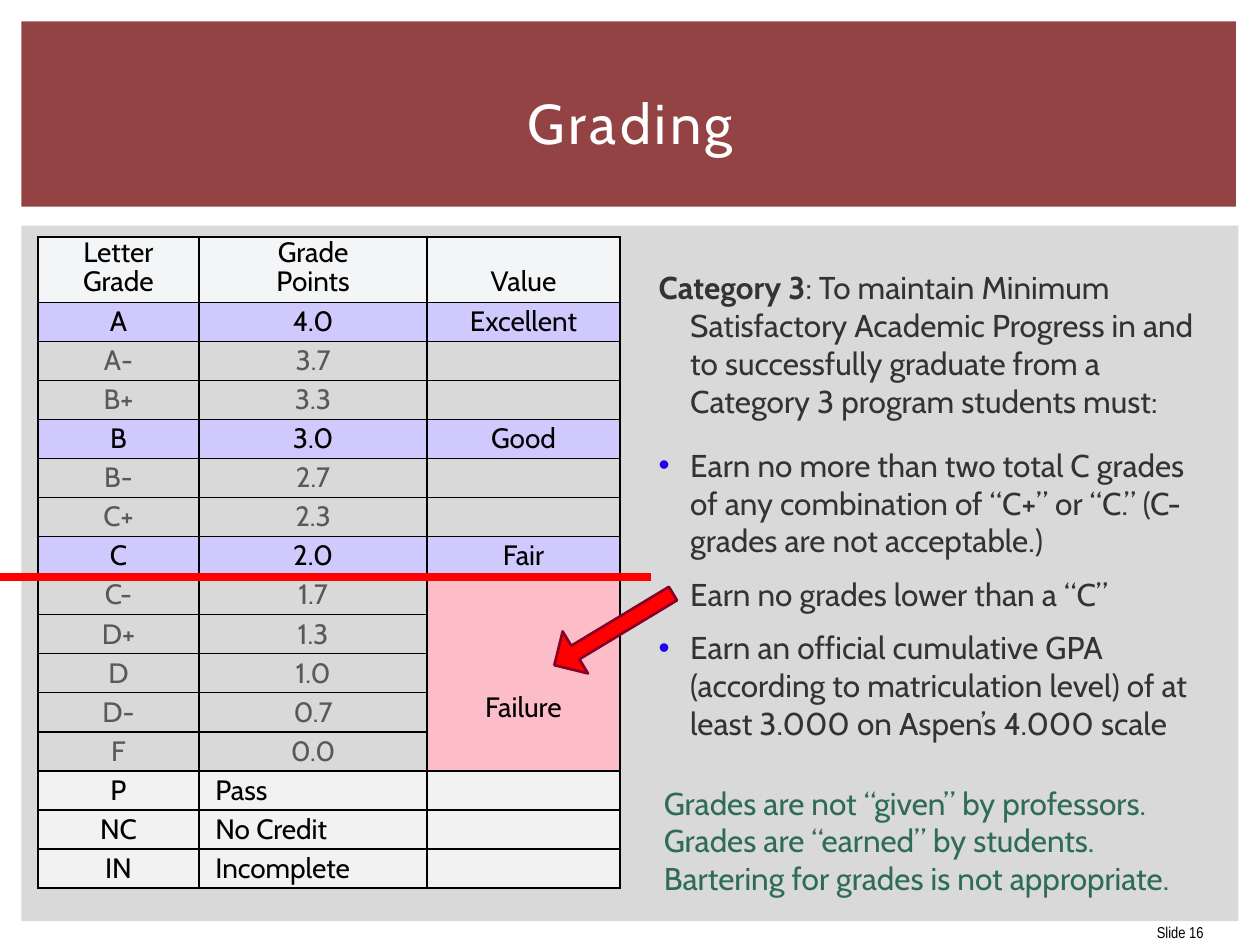
from lxml.etree import SubElement
from pptx import Presentation
from pptx.dml.color import RGBColor
from pptx.enum.shapes import MSO_CONNECTOR, MSO_SHAPE
from pptx.enum.text import MSO_ANCHOR, PP_ALIGN
from pptx.oxml.ns import qn
from pptx.util import Inches, Pt

BLACK = RGBColor(0x00, 0x00, 0x00)
WHITE = RGBColor(0xFF, 0xFF, 0xFF)
PANEL_GREY = RGBColor(0xD9, 0xD9, 0xD9)
MAROON = RGBColor(0x93, 0x43, 0x43)
HEADER_GREY = RGBColor(0xF4, 0xF5, 0xF7)
LILAC = RGBColor(0xD0, 0xC9, 0xFE)
PINK = RGBColor(0xFC, 0xBD, 0xC8)
PALE_GREY = RGBColor(0xF2, 0xF2, 0xF2)
MID_GREY = RGBColor(0x59, 0x59, 0x59)
DARK_GREY = RGBColor(0x33, 0x33, 0x33)
GREEN = RGBColor(0x2E, 0x6C, 0x57)
RED = RGBColor(0xFF, 0x00, 0x00)
WINE = RGBColor(0x86, 0x01, 0x27)
BULLET_BLUE = RGBColor(0x1F, 0x03, 0xEB)

COLUMNS, ROWS = 100, 75
WIDTH, HEIGHT = Inches(10), Inches(7.5)

HEADERS = ["Letter Grade", "Grade\nPoints", "Value"]
GRADES = [
    ("A", "4.0", "Excellent"), ("A-", "3.7", ""), ("B+", "3.3", ""),
    ("B", "3.0", "Good"), ("B-", "2.7", ""), ("C+", "2.3", ""),
    ("C", "2.0", "Fair"), ("C-", "1.7", "Failure"), ("D+", "1.3", ""),
    ("D", "1.0", ""), ("D-", "0.7", ""), ("F", "0.0", ""),
]
OTHER_MARKS = [("P", "Pass", ""), ("NC", "No Credit", ""), ("IN", "Incomplete", "")]
FAILURE_ROWS = (8, 12)

REQUIREMENTS = [
    "Earn no more than two total C grades of any combination of “C+” or “C.” "
    "(C- grades are not acceptable.)",
    "Earn no grades lower than a “C”",
    "Earn an official cumulative GPA (according to matriculation level) of at "
    "least 3.000 on Aspen’s 4.000 scale",
]
REMINDERS = [
    "Grades are not “given” by professors.",
    "Grades are “earned” by students.",
    "Bartering for grades is not appropriate.",
]


def write(paragraph, text, size=18, color=BLACK, font="Cabin", bold=False,
          align=PP_ALIGN.LEFT, tracking=0):
    """Add text to a paragraph, with a line break at each newline."""
    paragraph.alignment = align
    for number, line in enumerate(text.split("\n")):
        if number:
            paragraph.add_line_break()
        run = paragraph.add_run()
        run.text = line
        run.font.size, run.font.name, run.font.bold = Pt(size), font, bold
        run.font.color.rgb = color
        if tracking:
            run.font._element.set("spc", str(tracking * 100))


def hang(paragraph, after, bullet=None):
    """Set a hanging indent and spacing, with an optional bullet."""
    paragraph.space_before, paragraph.space_after = Pt(7.5), Pt(after)
    properties = paragraph._p.get_or_add_pPr()
    properties.set("marL", str(Inches(0.3)))
    properties.set("indent", str(Inches(-0.25)))
    if bullet:
        color = SubElement(properties, qn("a:buClr"))
        SubElement(color, qn("a:srgbClr"), val=str(BULLET_BLUE))
        SubElement(properties, qn("a:buFont"), typeface="Arial")
        SubElement(properties, qn("a:buChar"), char=bullet)


def outline_cell(cell):
    properties = cell._tc.get_or_add_tcPr()
    for side in ("lnL", "lnR", "lnT", "lnB"):
        line = SubElement(properties, qn(f"a:{side}"), w=str(Pt(1)))
        fill = SubElement(line, qn("a:solidFill"))
        SubElement(fill, qn("a:srgbClr"), val=str(BLACK))


class GridSlide:
    """A slide whose lengths are counted in grid columns and rows."""

    def __init__(self, presentation):
        self.slide = presentation.slides.add_slide(presentation.slide_layouts[6])
        self.shapes = self.slide.shapes

    def box(self, left, top, width, height):
        column, row = WIDTH / COLUMNS, HEIGHT / ROWS
        return (round(left * column), round(top * row),
                round(width * column), round(height * row))

    def block(self, area, fill, kind=MSO_SHAPE.RECTANGLE):
        shape = self.shapes.add_shape(kind, *self.box(*area))
        shape.shadow.inherit = False
        shape.fill.solid()
        shape.fill.fore_color.rgb = fill
        shape.line.fill.background()
        return shape

    def arrow(self, area, rotation):
        shape = self.block(area, RED, MSO_SHAPE.RIGHT_ARROW)
        shape.adjustments[0] = 0.32
        shape.rotation = rotation
        shape.line.color.rgb = WINE
        shape.line.width = Pt(1.5)

    def rule(self, left, top, width):
        x, y, length, _ = self.box(left, top, width, 0)
        line = self.shapes.add_connector(MSO_CONNECTOR.STRAIGHT, x, y, x + length, y)
        line.line.color.rgb = RED
        line.line.width = Pt(4.5)
        SubElement(line._element.spPr, qn("a:effectLst"))

    def text(self, area, lines=(), anchor=MSO_ANCHOR.TOP, **style):
        frame = self.shapes.add_textbox(*self.box(*area)).text_frame
        frame.word_wrap = True
        frame.vertical_anchor = anchor
        for number, line in enumerate(lines):
            paragraph = frame.add_paragraph() if number else frame.paragraphs[0]
            write(paragraph, line, **style)
        return frame

    def table(self, area, widths, heights):
        frame = self.shapes.add_table(len(heights), len(widths), *self.box(*area))
        table = frame.table
        table.first_row = table.horz_banding = False
        for column, width in zip(table.columns, widths):
            column.width = self.box(0, 0, width, 0)[2]
        for row, height in zip(table.rows, heights):
            row.height = self.box(0, 0, 0, height)[3]
        return table

    def cell(self, cell, text, fill=None, margins=(0.03, 0.02), **style):
        outline_cell(cell)
        cell.margin_left = cell.margin_right = Inches(margins[0])
        cell.margin_top = cell.margin_bottom = Inches(margins[1])
        if fill is None:
            cell.fill.background()
        else:
            cell.fill.solid()
            cell.fill.fore_color.rgb = fill
        paragraph = cell.text_frame.paragraphs[0]
        if text:
            write(paragraph, text, size=16, **style)
        else:
            SubElement(paragraph._p, qn("a:endParaRPr"), sz="1600")
        return paragraph


def add_grade_table(grid):
    records = GRADES + OTHER_MARKS
    table = grid.table((3, 18.8, 46.2, 51.7), (12.8, 18.1, 15.3),
                       [5.2] + [3.1] * len(records))
    for column, header in enumerate(HEADERS):
        cell = table.cell(0, column)
        paragraph = grid.cell(cell, header, HEADER_GREY, margins=(0.06, 0.03),
                              align=PP_ALIGN.CENTER)
        paragraph.line_spacing = Pt(16.5)
    table.cell(0, 2).vertical_anchor = MSO_ANCHOR.BOTTOM

    for row, record in enumerate(records, start=1):
        other = record in OTHER_MARKS
        main_grade = record[0] in ("A", "B", "C")
        fill = PALE_GREY if other else LILAC if main_grade else None
        for column, text in enumerate(record):
            failure = column == 2 and FAILURE_ROWS[0] <= row <= FAILURE_ROWS[1]
            description = other and column == 1
            cell = table.cell(row, column)
            grid.cell(cell, text, PINK if failure else fill,
                      color=BLACK if other or main_grade or failure else MID_GREY,
                      align=PP_ALIGN.LEFT if description else PP_ALIGN.CENTER)
            if description:
                cell.margin_left = Inches(0.13)

    failure_cell = table.cell(FAILURE_ROWS[0], 2)
    failure_cell.merge(table.cell(FAILURE_ROWS[1], 2))
    failure_cell.vertical_anchor = MSO_ANCHOR.MIDDLE
    failure_cell.margin_top = Inches(0.56)


def add_requirements(grid):
    frame = grid.text((50.8, 20.8, 46.6, 40))
    introduction = frame.paragraphs[0]
    write(introduction, "Category 3", color=DARK_GREY, bold=True)
    write(introduction, ": To maintain Minimum Satisfactory Academic Progress in and "
          "to successfully graduate from a Category 3 program students must:",
          color=DARK_GREY)
    hang(introduction, after=7.5)
    for requirement in REQUIREMENTS:
        paragraph = frame.add_paragraph()
        write(paragraph, requirement, color=DARK_GREY)
        hang(paragraph, after=1.5, bullet="•")


def main():
    presentation = Presentation()
    presentation.slide_width, presentation.slide_height = WIDTH, HEIGHT
    grid = GridSlide(presentation)
    grid.block((1.7, 17.9, 96.6, 55.2), PANEL_GREY)
    grid.block((1.7, 1.7, 96.4, 14.7), MAROON)
    grid.text((90.1, 72.5, 6.4, 3), ["Slide 16"], MSO_ANCHOR.MIDDLE, size=9,
              font="Arial Narrow", align=PP_ALIGN.RIGHT)
    add_grade_table(grid)
    add_requirements(grid)
    grid.text((4.2, 3.9, 91.7, 11.5), ["Grading"], MSO_ANCHOR.MIDDLE, size=32,
              color=WHITE, align=PP_ALIGN.CENTER, tracking=2)
    grid.rule(0, 45.8, 51.7)
    grid.arrow((43.2, 48, 11, 3.9), rotation=148.9)
    grid.text((51.7, 61.7, 45.3, 10.1), REMINDERS, color=GREEN)
    presentation.save("out.pptx")


if __name__ == "__main__":
    main()
